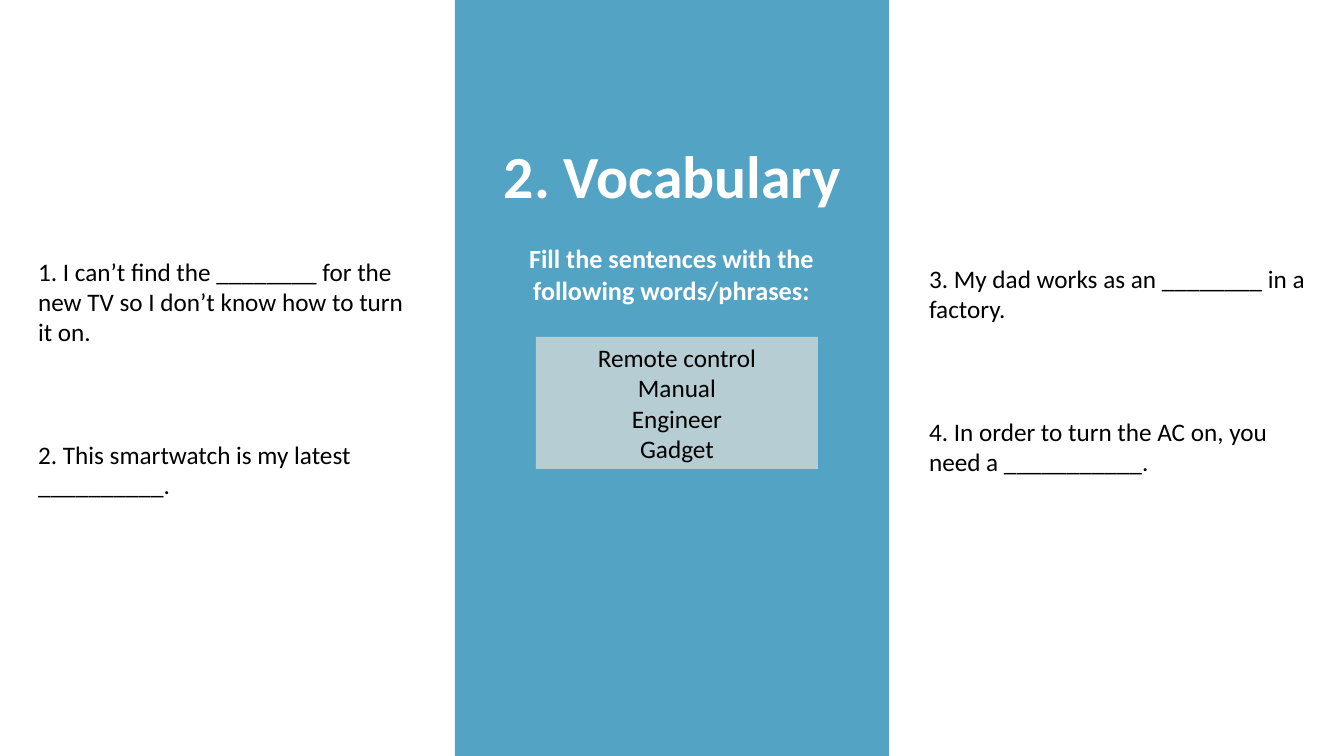
"""Build a vocabulary gap-fill slide."""
import dataclasses

import pptx
import pptx.dml.color
import pptx.enum.shapes
import pptx.enum.text
import pptx.oxml
import pptx.oxml.ns
import pptx.util

EMU_PER_PX = 914400 / 100.8
ALIGN = pptx.enum.text.PP_ALIGN
ANCHOR = pptx.enum.text.MSO_ANCHOR


@dataclasses.dataclass(frozen=True)
class Theme:
    """Colours, font and type sizes of the slide."""
    font: str = "Calibri"
    panel: str = "3494BA"
    panel_opacity: int = 85
    word_box: str = "B5CDD3"
    light: str = "FFFFFF"
    dark: str = "000000"
    title_size: float = 42.7
    instruction_size: float = 18.7
    body_size: float = 18
    sentence_gap: float = 66


THEME = Theme()


def px(length):
    """Turn pixels into EMU."""
    return pptx.util.Emu(round(length * EMU_PER_PX))


def place(shape, left, top, width, height):
    """Move and size a shape, in pixels."""
    shape.left, shape.top = px(left), px(top)
    shape.width, shape.height = px(width), px(height)


def write(shape, text, size, color, bold=False, align=ALIGN.CENTER, anchor=ANCHOR.MIDDLE):
    """Fill a shape with uniformly formatted text."""
    frame = shape.text_frame
    frame.text = text
    frame.word_wrap = True
    frame.auto_size = pptx.enum.text.MSO_AUTO_SIZE.NONE
    frame.vertical_anchor = anchor
    for paragraph in frame.paragraphs:
        paragraph.alignment = align
        for run in paragraph.runs:
            run.font.name = THEME.font
            run.font.size = pptx.util.Pt(size)
            run.font.bold = bold
            run.font.color.rgb = pptx.dml.color.RGBColor.from_string(color)


def write_sentences(placeholder, sentences):
    """Write spaced sentences without bullets into a body placeholder."""
    write(placeholder, "\n".join(sentences), THEME.body_size, THEME.dark,
          align=ALIGN.LEFT, anchor=ANCHOR.TOP)
    for index, paragraph in enumerate(placeholder.text_frame.paragraphs):
        paragraph.space_before = pptx.util.Pt(THEME.sentence_gap if index else 0)
        properties = paragraph._p.get_or_add_pPr()
        properties.set("marL", "0")
        properties.set("indent", "0")
        properties.append(pptx.oxml.parse_xml(
            f"<a:buNone {pptx.oxml.ns.nsdecls('a')}/>"))


def add_rectangle(slide, color, left, top, width, height):
    """Add a flat rectangle without outline."""
    shape = slide.shapes.add_shape(
        pptx.enum.shapes.MSO_SHAPE.RECTANGLE, px(left), px(top), px(width), px(height))
    shape.shadow.inherit = False
    shape.fill.solid()
    shape.fill.fore_color.rgb = pptx.dml.color.RGBColor.from_string(color)
    shape.line.fill.background()
    return shape


def add_panel(slide):
    """Add the translucent centre panel behind everything else."""
    panel = add_rectangle(slide, THEME.panel, 455, 0, 434, 756)
    color = panel.element.spPr.find(".//" + pptx.oxml.ns.qn("a:srgbClr"))
    color.append(pptx.oxml.parse_xml(
        f"<a:alpha {pptx.oxml.ns.nsdecls('a')} val='{THEME.panel_opacity * 1000}'/>"))
    slide.shapes.element.insert(2, panel.element)


def main():
    """Build and save the slide."""
    presentation = pptx.Presentation()
    presentation.slide_width, presentation.slide_height = px(1344), px(756)
    slide = presentation.slides.add_slide(presentation.slide_layouts.get_by_name("Two Content"))
    title, left_list, right_list = list(slide.placeholders)[:3]

    add_panel(slide)
    place(title, 468, 133, 409, 83)
    write(title, "2. Vocabulary", THEME.title_size, THEME.light, bold=True)

    instruction = slide.shapes.add_textbox(px(485), px(237), px(373), px(74))
    write(instruction, "Fill the sentences with the following words/phrases:",
          THEME.instruction_size, THEME.light, bold=True)

    word_box = add_rectangle(slide, THEME.word_box, 536, 337, 282, 132)
    write(word_box, "Remote control\nManual\nEngineer\nGadget", THEME.body_size, THEME.dark)

    place(left_list, 28, 251, 398, 254)
    write_sentences(left_list, [
        "1. I can’t find the ________ for the new TV so I don’t know how to turn it on.",
        "2. This smartwatch is my latest __________.",
    ])
    place(right_list, 919, 258, 398, 224)
    write_sentences(right_list, [
        "3. My dad works as an ________ in a factory.",
        "4. In order to turn the AC on, you need a ___________.",
    ])
    presentation.save("out.pptx")


if __name__ == "__main__":
    main()
